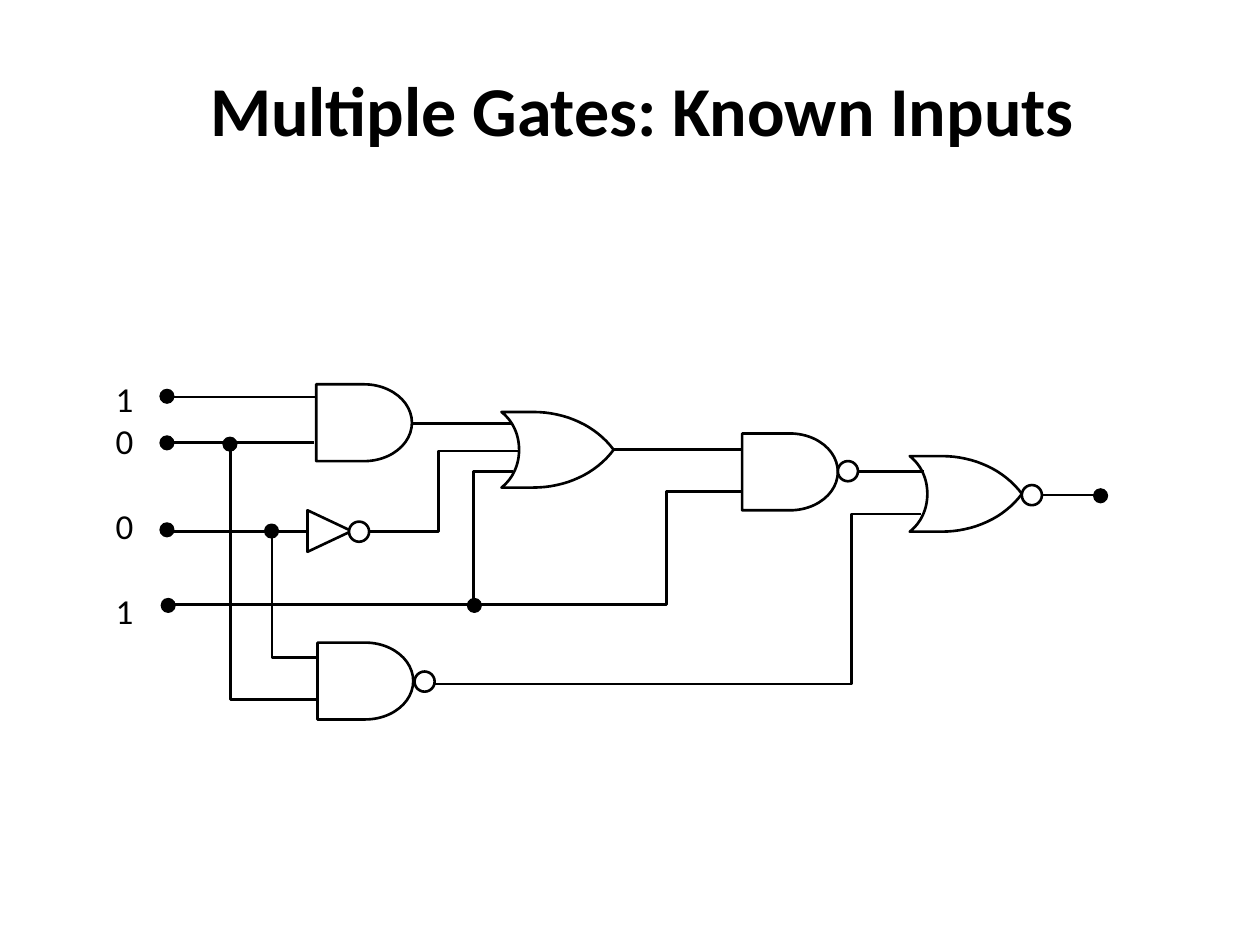
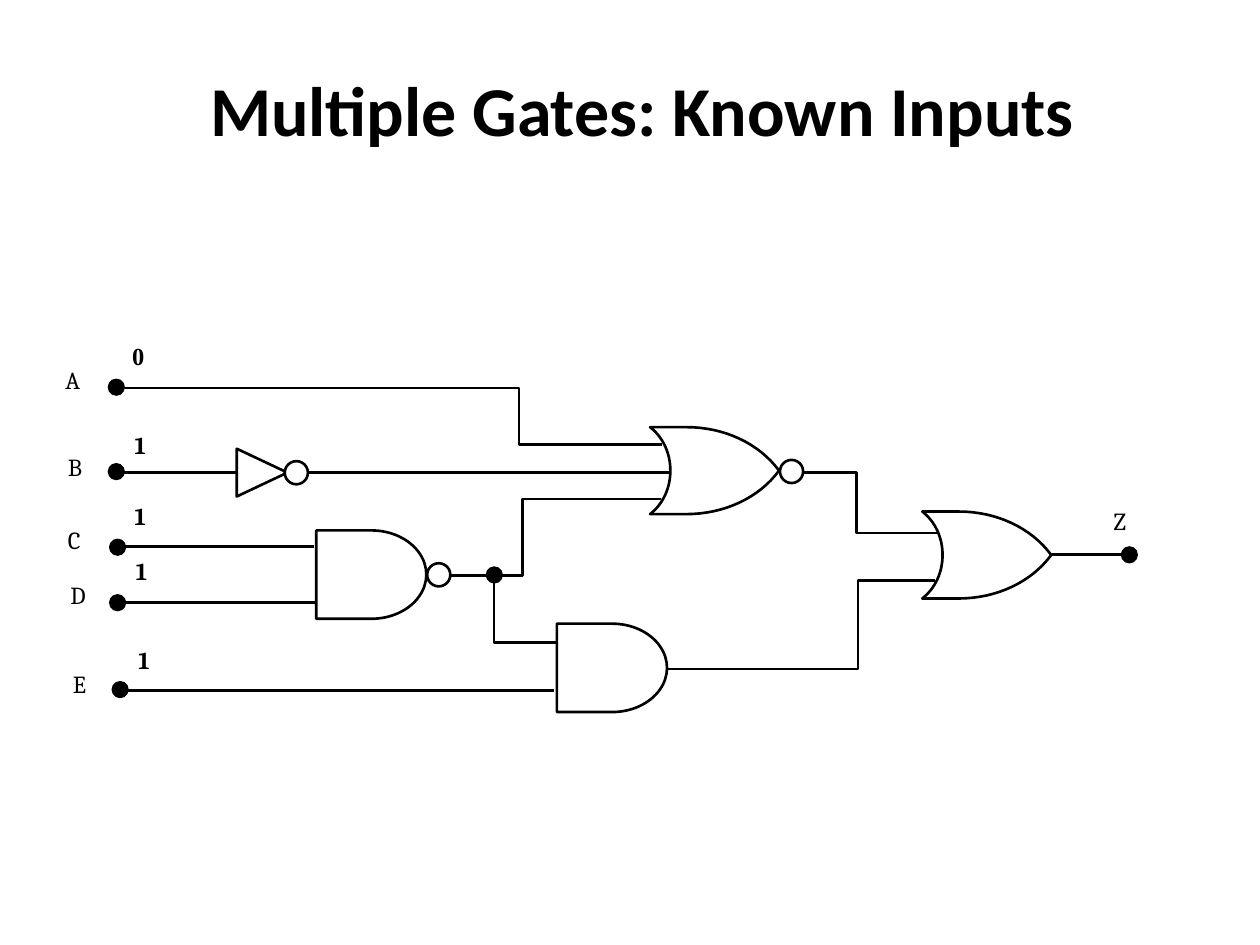
from lxml import etree
from pptx import Presentation
from pptx import util as u
from pptx.dml.color import RGBColor
from pptx.enum import shapes, text
from pptx.oxml.ns import qn

BLACK = RGBColor(0, 0, 0)
WHITE = RGBColor(255, 255, 255)
WIRE_WIDTH, DOT_WIDTH = 1.5, 0.75

deck = Presentation()
deck.slide_width, deck.slide_height = u.Inches(10), u.Inches(7.5)
CELL = deck.slide_width / 100  # grid of 100 columns by 75 rows

# Symbols at scale 1: preset, columns, rows, rotation, fill, line width
SYMBOLS = {
    "and": (shapes.MSO_SHAPE.FLOWCHART_DELAY, 7.6, 6.1, 0, WHITE, WIRE_WIDTH),
    "not": (shapes.MSO_SHAPE.FLOWCHART_EXTRACT, 3.3, 3.5, 90, WHITE, WIRE_WIDTH),
    "bubble": (shapes.MSO_SHAPE.OVAL, 1.6, 1.6, 0, WHITE, WIRE_WIDTH),
    "dot": (shapes.MSO_SHAPE.OVAL, 1.1, 1.1, 0, BLACK, DOT_WIDTH),
}

# Upper half of the OR gate: back arc going up, then front arc down to the nose
OR_ROWS = 6
OR_ARCS = [
    [(1.4, 3), (1.4, 1.8), (0.9, 0.7), (0, 0)],
    [(2.5, 0), (5.1, 0), (7.5, 1.1), (8.9, 3)],
]
STEPS = 16
or_upper = []
for arc in OR_ARCS:
    for step in range(STEPS + 1):
        t = step / STEPS
        weights = ((1 - t) ** 3, 3 * t * (1 - t) ** 2, 3 * t * t * (1 - t), t ** 3)
        or_upper.append(tuple(sum(w * p[axis] for w, p in zip(weights, arc)) for axis in (0, 1)))
or_outline = or_upper + [(x, OR_ROWS - y) for x, y in reversed(or_upper)]

# Labels: lines with space before in points, left, top, columns, rows, size, font, bold, alignment
LEFT, CENTER = text.PP_ALIGN.LEFT, text.PP_ALIGN.CENTER
TITLE = ([("Multiple Gates: Known Inputs", 0)], 13.9, 4.8, 74.1, 7.7, 40, "Calibri", True, CENTER)
INPUT_GAP = 24.4
input_values = ([("1", 0), ("0", 0), ("0", INPUT_GAP), ("1", INPUT_GAP)],
                8.2, 29.5, 3.6, 21.2, 20, "Calibri", False, LEFT)

terminal_labels = []
for name, left, top, font, bold in [
    ("A", 4.2, 28.5, "Cambria", False), ("B", 4.4, 35.4, "Cambria", False),
    ("C", 4.4, 41.2, "Cambria", False), ("D", 4.6, 45.5, "Cambria", False),
    ("E", 4.8, 52.6, "Cambria", False), ("Z", 87.4, 39.7, "Cambria", False),
    ("0", 9.5, 26.6, "Times New Roman", True), ("1", 9.7, 33.6, "Cambria", True),
    ("1", 9.7, 39.3, "Cambria", True), ("1", 9.8, 43.6, "Cambria", True),
    ("1", 10, 50.7, "Cambria", True),
]:
    terminal_labels.append(([(name, 0)], left, top, 6.2, 5.9, 14, font, bold, LEFT))

four_inputs = {
    "scale": 1,
    "labels": [TITLE, input_values],
    "wires": [
        [(13, 31.5), (25, 31.5)],
        [(13, 35.1), (24.9, 35.1)],
        [(13.2, 42.2), (34.8, 42.2), (34.8, 35.8), (41.2, 35.8)],
        [(13.1, 48), (52.9, 48), (52.9, 39), (58.9, 39)],
        [(18.3, 35.2), (18.3, 55.5), (25.2, 55.5)],
        [(21.6, 42.2), (21.6, 52.2), (25.1, 52.2)],
        [(32.6, 33.6), (40.6, 33.6)],
        [(37.6, 48), (37.6, 37.4), (40.7, 37.4)],
        [(48.7, 35.7), (59, 35.7)],
        [(34.5, 54.3), (67.6, 54.3), (67.6, 40.8), (73.1, 40.8)],
        [(68.1, 37.4), (73.3, 37.4)],
        [(82.8, 39.3), (87.5, 39.3)],
    ],
    "or": [(39.8, 32.7), (72.2, 36.2)],
    "symbols": {
        "and": [(25.1, 30.5), (25.2, 51), (58.9, 34.4)],
        "not": [(24.5, 40.4)],
        "bubble": [(27.7, 41.4), (32.9, 53.3), (66.5, 36.6), (81.1, 38.5)],
        "dot": [(12.7, 30.9), (12.7, 34.6), (12.7, 41.5), (12.8, 47.5),
                (17.7, 34.7), (21, 41.6), (37.1, 47.5), (86.8, 38.8)],
    },
}

five_inputs = {
    "scale": 1.15,
    "labels": [TITLE] + terminal_labels,
    "wires": [
        [(9, 30.8), (41.2, 30.8), (41.2, 35.3), (52.5, 35.3)],
        [(9.5, 37.5), (53.2, 37.5)],
        [(9.5, 43.4), (24.9, 43.4)],
        [(9.6, 47.8), (25.1, 47.8)],
        [(9.4, 54.8), (44, 54.8)],
        [(35.8, 45.7), (41.5, 45.7), (41.5, 39.6), (52.5, 39.6)],
        [(39.2, 45.8), (39.2, 51), (44.3, 51)],
        [(63.7, 37.5), (68, 37.5), (68, 42.3), (74.5, 42.3)],
        [(53, 53.1), (68.1, 53.1), (68.1, 46.1), (74.2, 46.1)],
        [(83.3, 44), (89.9, 44)],
    ],
    "or": [(51.6, 33.9), (73.2, 40.6)],
    "symbols": {
        "and": [(25.1, 42.1), (44.2, 49.5)],
        "not": [(18.9, 35.5)],
        "bubble": [(22.6, 36.6), (33.9, 44.7), (61.9, 36.5)],
        "dot": [(8.6, 30.1), (8.6, 36.8), (8.7, 42.8), (8.7, 47.2), (8.9, 54.1),
                (38.6, 45), (89, 43.4)],
    },
}


def ink(shape, fill, width):
    """Give a closed or open outline a flat fill and a black line."""
    shape.shadow.inherit = False
    if fill is None:
        shape.fill.background()
    else:
        shape.fill.solid()
        shape.fill.fore_color.rgb = fill
    shape.line.color.rgb = BLACK
    shape.line.width = u.Pt(width)


def trace(slide, points, close=False):
    """Draw an unfilled outline through points given in grid cells."""
    start, *rest = [(round(x * CELL), round(y * CELL)) for x, y in points]
    pen = slide.shapes.build_freeform(*start)
    pen.add_line_segments(rest, close=close)
    ink(pen.convert_to_shape(), None, WIRE_WIDTH)


for circuit in (four_inputs, five_inputs):
    slide = deck.slides.add_slide(deck.slide_layouts[6])
    scale = circuit["scale"]

    for wire in circuit["wires"]:
        if len(wire) > 2:
            trace(slide, wire)
            continue
        ends = [round(n * CELL) for point in wire for n in point]
        straight = slide.shapes.add_connector(shapes.MSO_CONNECTOR.STRAIGHT, *ends)
        straight.line.color.rgb = BLACK
        straight.line.width = u.Pt(WIRE_WIDTH)
        etree.SubElement(straight._element.spPr, qn("a:effectLst"))

    for left, top in circuit["or"]:
        trace(slide, [(left + x * scale, top + y * scale) for x, y in or_outline], close=True)

    for kind, places in circuit["symbols"].items():
        preset, columns, rows, rotation, fill, width = SYMBOLS[kind]
        for left, top in places:
            box = [round(n * CELL) for n in (left, top, columns * scale, rows * scale)]
            symbol = slide.shapes.add_shape(preset, *box)
            symbol.rotation = rotation
            ink(symbol, fill, width)

    for lines, left, top, columns, rows, size, font, bold, alignment in circuit["labels"]:
        box = [round(n * CELL) for n in (left, top, columns, rows)]
        frame = slide.shapes.add_textbox(*box).text_frame
        frame.word_wrap = True
        for number, (words, space) in enumerate(lines):
            paragraph = frame.add_paragraph() if number else frame.paragraphs[0]
            paragraph.alignment = alignment
            paragraph.space_before = u.Pt(space)
            run = paragraph.add_run()
            run.text = words
            run.font.name = font
            run.font.size = u.Pt(size)
            run.font.bold = bold
            run.font.color.rgb = BLACK

deck.save("out.pptx")
